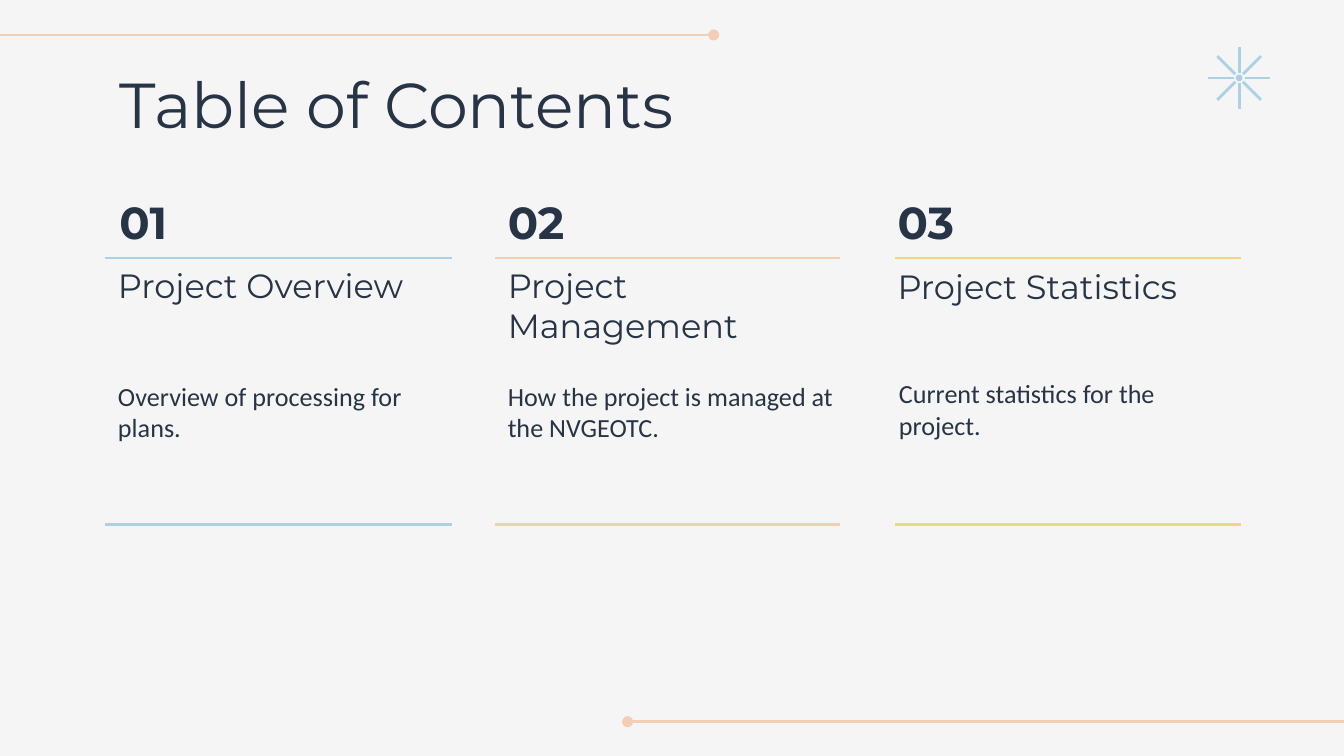
import math
from dataclasses import dataclass

import lxml.etree
import pptx
import pptx.dml.color
import pptx.enum.shapes
import pptx.enum.text
import pptx.oxml.ns
import pptx.util

Inches = pptx.util.Inches
ANCHOR = pptx.enum.text.MSO_ANCHOR


@dataclass(frozen=True)
class Theme:
    paper: str = "F5F5F5"
    ink: str = "273446"
    blue: str = "ACD1E5"
    peach: str = "F3CEB2"
    yellow: str = "F3D57A"
    coral: str = "FCA8A2"
    display: str = "Montserrat"
    body: str = "Calibri"
    title_size: int = 34
    number_size: int = 24
    heading_size: int = 18
    body_size: int = 14
    stroke: float = 1.5


THEME = Theme()
COLUMNS = [
    ("01", "Project Overview", "Overview of processing for plans.", THEME.blue,
     (0.78, 3.36), (0.79, 1.35), (0.78, 1.84, 2.64), (0.78, 2.73)),
    ("02", "Project Management", "How the project is managed at the NVGEOTC.", THEME.peach,
     (3.68, 6.25), (3.68, 1.35), (3.68, 2.14, 2.57), (3.68, 2.73)),
    ("03", "Project Statistics", "Current statistics for the project.", THEME.yellow,
     (6.66, 9.23), (6.58, 1.35), (6.58, 1.85, 2.64), (6.59, 2.71)),
]


def rgb(value):
    return pptx.dml.color.RGBColor.from_string(value)


def write_text(sp, text, size, font=THEME.display, bold=False, anchor=ANCHOR.MIDDLE, spacing=None):
    tf = sp.text_frame
    tf.word_wrap = True
    tf.auto_size = pptx.enum.text.MSO_AUTO_SIZE.NONE
    tf.vertical_anchor = anchor
    tf.margin_left = tf.margin_top = tf.margin_right = tf.margin_bottom = Inches(0.1)
    p = tf.paragraphs[0]
    p.alignment = pptx.enum.text.PP_ALIGN.LEFT
    p.line_spacing = spacing
    r = p.add_run()
    r.text = text
    r.font.size = pptx.util.Pt(size)
    r.font.name = font
    r.font.bold = bold
    r.font.color.rgb = rgb(THEME.ink)


def add_text(s, left, top, text, size, width=2.64, height=0.53, **style):
    sp = s.shapes.add_textbox(Inches(left), Inches(top), Inches(width), Inches(height))
    write_text(sp, text, size, **style)


def set_stroke(line, color):
    line.color.rgb = rgb(color)
    line.width = pptx.util.Pt(THEME.stroke)


def add_line(s, start, end, color, oval=None):
    sp = s.shapes.add_connector(
        pptx.enum.shapes.MSO_CONNECTOR.STRAIGHT, *(Inches(v) for v in (*start, *end)))
    set_stroke(sp.line, color)
    qn = pptx.oxml.ns.qn
    properties = sp._element.spPr
    if oval:
        lxml.etree.SubElement(properties.find(qn("a:ln")), qn(f"a:{oval}"), type="oval")
    lxml.etree.SubElement(properties, qn("a:effectLst"))


def add_star(s, x, y, inner=0.04, outer=0.23, dot=0.03):
    for step in range(8):
        dx, dy = math.cos(step * math.pi / 4), math.sin(step * math.pi / 4)
        add_line(s, (x + inner * dx, y + inner * dy), (x + outer * dx, y + outer * dy), THEME.blue)
    sp = s.shapes.add_shape(
        pptx.enum.shapes.MSO_SHAPE.OVAL,
        Inches(x - dot / 2), Inches(y - dot / 2), Inches(dot), Inches(dot))
    sp.shadow.inherit = False
    sp.fill.solid()
    sp.fill.fore_color.rgb = rgb(THEME.coral)
    set_stroke(sp.line, THEME.blue)


def add_title(s, text):
    sp = s.shapes.title
    sp.left, sp.top, sp.width, sp.height = (Inches(v) for v in (0.79, 0.49, 8.43, 0.63))
    write_text(sp, text, THEME.title_size, spacing=0.9)


def add_column(s, number, heading, summary, color, span, number_at, heading_at, summary_at):
    add_text(s, *number_at, number, THEME.number_size, height=0.65, bold=True, spacing=0.9)
    left, top, width = heading_at
    add_text(s, left, top, heading, THEME.heading_size, width=width, anchor=ANCHOR.BOTTOM)
    add_text(s, *summary_at, summary, THEME.body_size, font=THEME.body, anchor=ANCHOR.TOP)
    start, end = span
    for y in (1.92, 3.9):
        add_line(s, (start, y), (end, y), color)


def main():
    """Build the table of contents slide and save it."""
    prs = pptx.Presentation()
    prs.slide_width = Inches(10)
    prs.slide_height = prs.slide_width * 9 // 16
    s = prs.slides.add_slide(prs.slide_layouts[5])
    s.background.fill.solid()
    s.background.fill.fore_color.rgb = rgb(THEME.paper)
    add_line(s, (-0.01, 0.26), (5.31, 0.26), THEME.peach, oval="tailEnd")
    add_line(s, (4.67, 5.37), (10, 5.37), THEME.peach, oval="headEnd")
    add_star(s, 9.22, 0.58)
    add_title(s, "Table of Contents")
    for column in COLUMNS:
        add_column(s, *column)
    prs.save("out.pptx")


if __name__ == "__main__":
    main()
